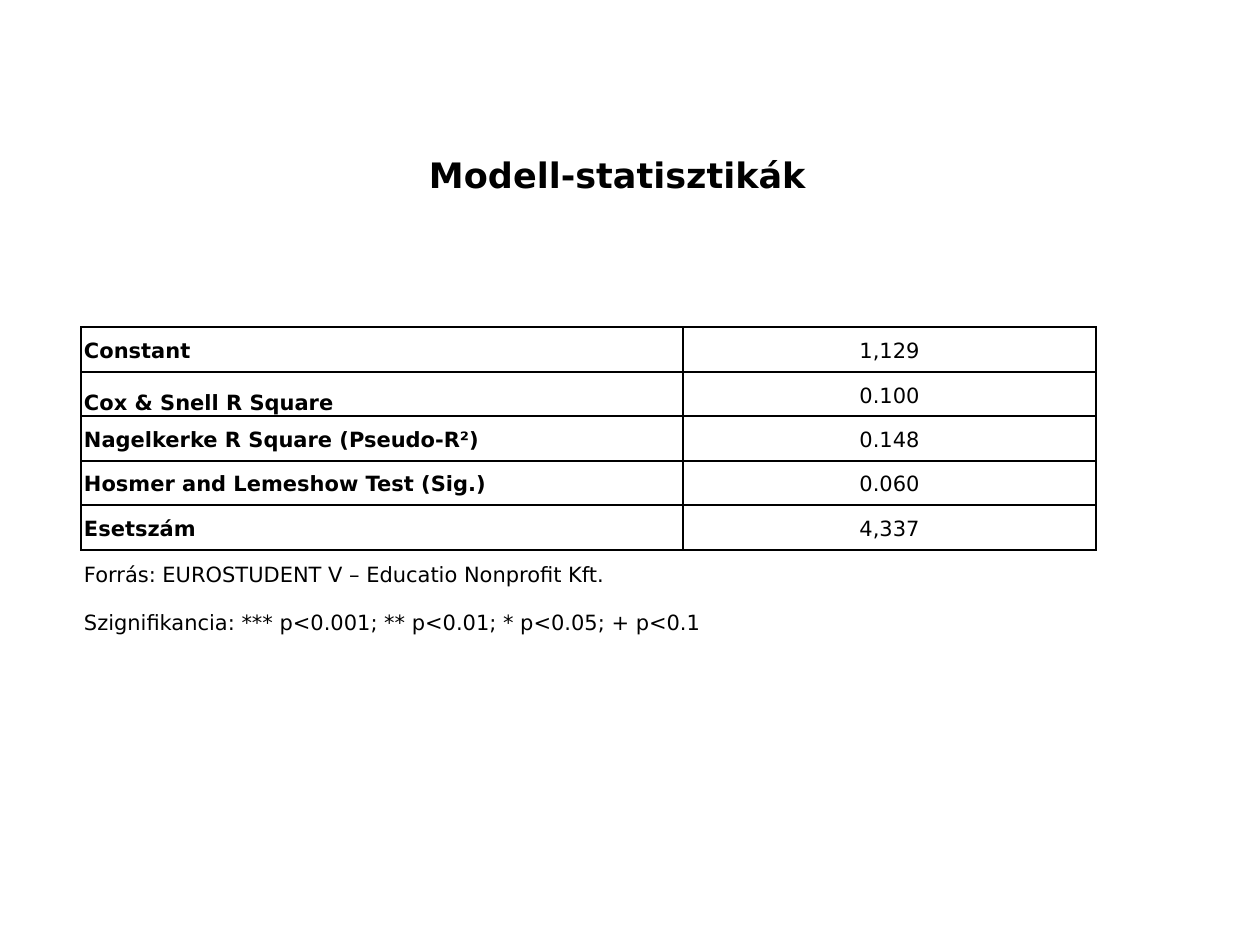
from dataclasses import dataclass

from lxml.etree import SubElement
from pptx import Presentation
from pptx.dml.color import RGBColor
from pptx.enum.text import MSO_ANCHOR, MSO_AUTO_SIZE, PP_ALIGN
from pptx.oxml.ns import qn
from pptx.util import Emu, Pt

EMU_PER_PX = 914400 / 126


def px(length):
    return Emu(round(length * EMU_PER_PX))


@dataclass(frozen=True)
class Theme:
    font: str = "DejaVu Sans"
    ink: str = "000000"
    title_size: int = 20
    table_size: int = 12
    line_spacing: float = 1.15
    cell_inset: int = 3
    border_width: int = 1


def write(frame, text, *, theme, size, bold=False, align=PP_ALIGN.LEFT, spacing=1.0):
    para = frame.paragraphs[0]
    para.alignment = align
    para.line_spacing = spacing
    span = para.add_run()
    span.text = text
    span.font.name = theme.font
    span.font.size = Pt(size)
    span.font.bold = bold
    span.font.color.rgb = RGBColor.from_string(theme.ink)


class SlideBuilder:
    def __init__(self, page, theme):
        self.page = page
        self.theme = theme

    def title(self, text, left, top, width, height):
        box = self.page.shapes.title
        box.left, box.top, box.width, box.height = map(px, (left, top, width, height))
        frame = box.text_frame
        frame.word_wrap = False
        frame.auto_size = MSO_AUTO_SIZE.SHAPE_TO_FIT_TEXT
        frame.vertical_anchor = MSO_ANCHOR.TOP
        write(frame, text, theme=self.theme, size=self.theme.title_size,
              bold=True, align=PP_ALIGN.CENTER)

    def table(self, left, top, widths, heights):
        """Add a plain table without style bands, fills or cell margins."""
        frame = self.page.shapes.add_table(
            len(heights), len(widths), px(left), px(top), px(sum(widths)), px(sum(heights)))
        table = frame.table
        table.first_row = table.horz_banding = False
        for column, width in zip(table.columns, widths):
            column.width = px(width)
        for row, height in zip(table.rows, heights):
            row.height = px(height)
        for cell in table.iter_cells():
            cell.margin_left = cell.margin_right = px(self.theme.cell_inset)
            cell.margin_top = cell.margin_bottom = 0
            cell.fill.background()
        return table

    def cell_text(self, cell, text, *, anchor=MSO_ANCHOR.MIDDLE, **style):
        cell.vertical_anchor = anchor
        write(cell.text_frame, text, theme=self.theme, size=self.theme.table_size,
              spacing=self.theme.line_spacing, **style)

    def borders(self, cell, drawn):
        """Draw the sides named in drawn (L, R, T, B) and clear the others."""
        properties = cell._tc.get_or_add_tcPr()
        for position, side in enumerate("LRTB"):
            line = SubElement(properties, qn(f"a:ln{side}"),
                              w=str(Pt(self.theme.border_width)))
            properties.insert(position, line)
            if side in drawn:
                fill = SubElement(line, qn("a:solidFill"))
                SubElement(fill, qn("a:srgbClr"), val=self.theme.ink)
            else:
                SubElement(line, qn("a:noFill"))


STATISTICS = [
    ("Constant", "1,129", MSO_ANCHOR.MIDDLE),
    ("Cox & Snell R Square", "0.100", MSO_ANCHOR.BOTTOM),
    ("Nagelkerke R Square (Pseudo-R²)", "0.148", MSO_ANCHOR.MIDDLE),
    ("Hosmer and Lemeshow Test (Sig.)", "0.060", MSO_ANCHOR.MIDDLE),
    ("Esetszám", "4,337", MSO_ANCHOR.MIDDLE),
]
SOURCE = "Forrás: EUROSTUDENT V – Educatio Nonprofit Kft."
SIGNIFICANCE = "Szignifikancia: *** p<0.001; ** p<0.01; * p<0.05; + p<0.1"


def main():
    deck = Presentation()
    deck.slide_width, deck.slide_height = px(1260), px(945)
    page = deck.slides.add_slide(deck.slide_layouts[5])
    builder = SlideBuilder(page, Theme())
    builder.title("Modell-statisztikák", 416, 147, 403, 55)

    table = builder.table(81, 327, widths=(602, 77, 336),
                          heights=(45, 44, 45, 44, 45, 48, 48))
    source_row = len(STATISTICS)
    note_row = source_row + 1
    for row in range(len(table.rows)):
        sides = "LRTB" if row < source_row else "T" if row == source_row else ""
        for column in range(len(table.columns)):
            builder.borders(table.cell(row, column), sides)

    for row, (label, value, anchor) in enumerate(STATISTICS):
        table.cell(row, 1).merge(table.cell(row, 2))
        builder.cell_text(table.cell(row, 0), label, anchor=anchor, bold=True)
        builder.cell_text(table.cell(row, 1), value, align=PP_ALIGN.CENTER)

    table.cell(source_row, 0).merge(table.cell(source_row, 2))
    builder.cell_text(table.cell(source_row, 0), SOURCE)
    table.cell(note_row, 0).merge(table.cell(note_row, 1))
    builder.cell_text(table.cell(note_row, 0), SIGNIFICANCE, align=PP_ALIGN.JUSTIFY)

    deck.save("out.pptx")


if __name__ == "__main__":
    main()
